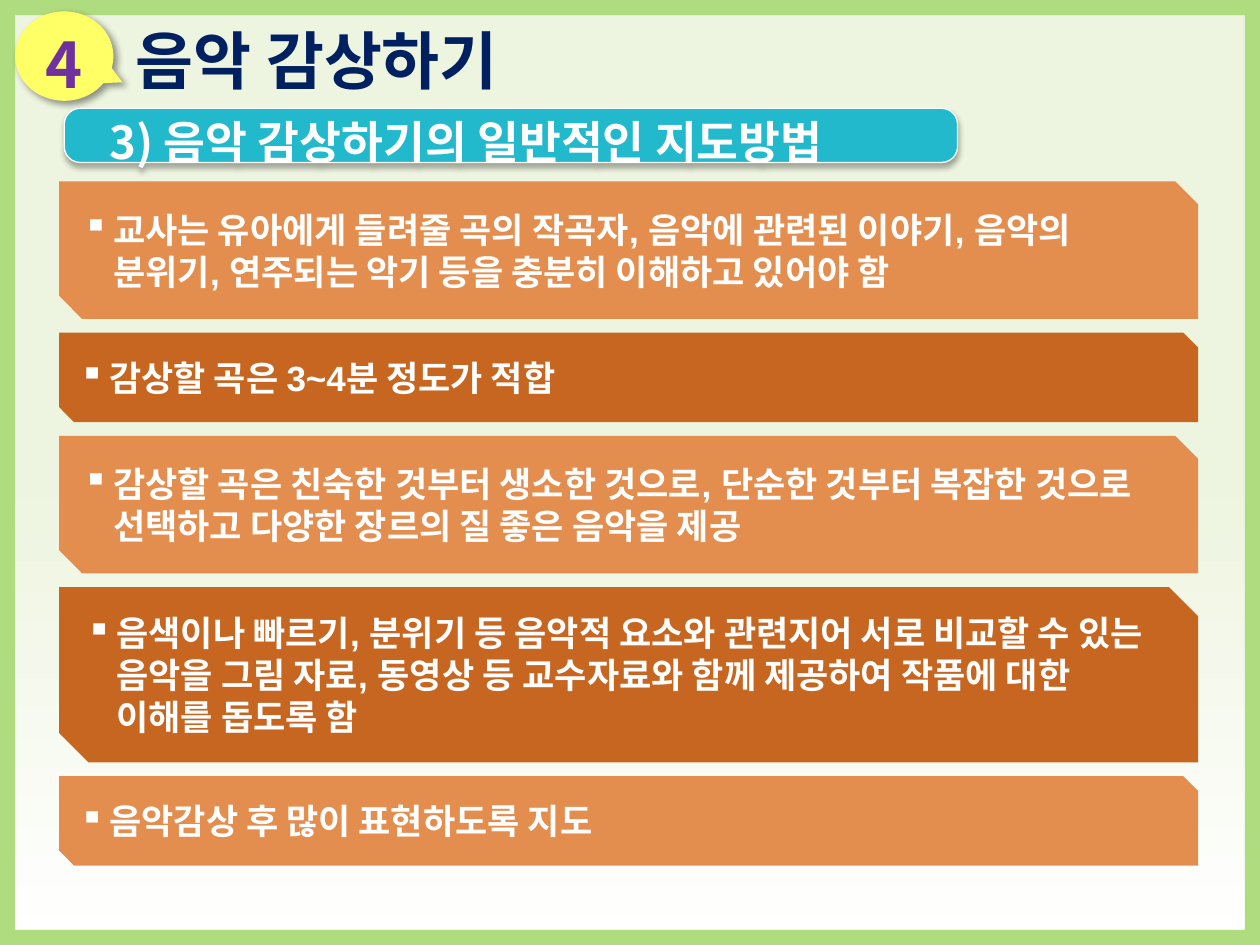
from lxml import etree
from pptx import Presentation
from pptx.dml.color import RGBColor
from pptx.enum.shapes import MSO_SHAPE
from pptx.enum.text import MSO_ANCHOR, PP_ALIGN
from pptx.oxml.ns import qn
from pptx.util import Emu, Inches, Pt

RECT, FRAME = MSO_SHAPE.RECTANGLE, MSO_SHAPE.FRAME
CALLOUT, ROUNDED = MSO_SHAPE.OVAL_CALLOUT, MSO_SHAPE.ROUNDED_RECTANGLE
SNIPPED = MSO_SHAPE.SNIP_2_DIAG_RECTANGLE
MIDDLE, CENTER, LEFT = MSO_ANCHOR.MIDDLE, PP_ALIGN.CENTER, PP_ALIGN.LEFT

WHITE = RGBColor(0xFF, 0xFF, 0xFF)
PALE_GREEN = RGBColor(0xED, 0xF4, 0xDF)
GREEN = RGBColor(0xAF, 0xDC, 0x7E)
NAVY = RGBColor(0x00, 0x20, 0x60)
YELLOW = RGBColor(0xFF, 0xFF, 0x66)
PURPLE = RGBColor(0x70, 0x30, 0xA0)
TEAL = RGBColor(0x23, 0xB9, 0xCD)
LIGHT_ORANGE = RGBColor(0xE3, 0x8E, 0x4F)
DARK_ORANGE = RGBColor(0xC6, 0x66, 0x20)

KOREAN, LATIN = "Noto Sans CJK KR", "Arial"
COLS, ROWS = 100, 75


class Deck:
    """Holds the style and the current slide; lengths are grid columns and rows."""

    def __init__(self):
        self.prs = Presentation()
        self.prs.slide_width, self.prs.slide_height = Inches(10), Inches(7.5)
        self.s = self.prs.slides.add_slide(self.prs.slide_layouts[6])

    def box(self, x, y, w, h):
        col, row = self.prs.slide_width / COLS, self.prs.slide_height / ROWS
        return [Emu(round(n)) for n in (x * col, y * row, w * col, h * row)]

    def shape(self, kind, box, fill=None, adjust=()):
        sp = self.s.shapes.add_shape(kind, *self.box(*box))
        sp.shadow.inherit = False
        sp.line.fill.background()
        if fill is not None:
            sp.fill.solid()
            sp.fill.fore_color.rgb = fill
        for i, value in enumerate(adjust):
            sp.adjustments[i] = value
        return sp

    def gradient(self, sp, stops, angle):
        sp.fill.gradient()
        sp.fill.gradient_angle = angle
        for stop, (position, color) in zip(sp.fill.gradient_stops, stops):
            stop.position = position
            stop.color.rgb = color

    def shadow(self, sp, blur, distance, angle, opacity):
        effects = sp._element.spPr.find(qn("a:effectLst"))
        outer = etree.SubElement(
            effects, qn("a:outerShdw"), blurRad=str(Pt(blur)), dist=str(Pt(distance)),
            dir=str(angle * 60000), algn="ctr", rotWithShape="0")
        color = etree.SubElement(outer, qn("a:srgbClr"), val="000000")
        etree.SubElement(color, qn("a:alpha"), val=str(opacity * 1000))

    def text(self, sp, text, size, color, font=KOREAN, align=LEFT, wrap=True,
             insets=(0.1, 0.05), indent=None, bullet=None, spacing=None):
        tf = sp.text_frame
        tf.text = text
        tf.word_wrap = wrap
        tf.vertical_anchor = MIDDLE
        tf.margin_left = tf.margin_right = Inches(insets[0])
        tf.margin_top = tf.margin_bottom = Inches(insets[1])
        p = tf.paragraphs[0]
        p.alignment = align
        if spacing:
            p.line_spacing = spacing
        pPr = p._p.get_or_add_pPr()
        if indent:
            pPr.set("marL", str(Inches(indent[0])))
            pPr.set("indent", str(Inches(indent[1])))
        if bullet:
            etree.SubElement(pPr, qn("a:buChar"), char=bullet)
        r = p.runs[0]
        r.font.name, r.font.size, r.font.bold = font, Pt(size), True
        r.font.color.rgb = color
        etree.SubElement(r._r.get_or_add_rPr(), qn("a:ea"), typeface=KOREAN)

    def title(self, box, text):
        sp = self.s.shapes.add_textbox(*self.box(*box))
        self.text(sp, text, 36, NAVY, wrap=False)

    def badge(self, box, text):
        sp = self.shape(CALLOUT, box, YELLOW, (0.592, 0.293))
        self.shadow(sp, 4, 3, 45, 40)
        self.text(sp, text, 36, PURPLE, align=CENTER, insets=(0.04, 0.04), spacing=1.2)

    def heading(self, box, text):
        sp = self.shape(ROUNDED, box, TEAL, (0.294,))
        sp.line.color.rgb, sp.line.width = WHITE, Pt(0.75)
        self.shadow(sp, 3.5, 2.2, 90, 32)
        self.text(sp, text, 26, WHITE, insets=(0.24, 0.05), indent=(0.28, -0.2), spacing=1.2)

    def panel(self, box, text, fill):
        sp = self.shape(SNIPPED, box, fill)
        self.text(sp, text, 20, WHITE, LATIN, indent=(0.24, -0.24), bullet="▪")


# Panel height in rows, and its text
GUIDELINES = [
    (10.9, "교사는 유아에게 들려줄 곡의 작곡자, 음악에 관련된 이야기, 음악의 분위기, "
           "연주되는 악기 등을 충분히 이해하고 있어야 함"),
    (7.1, "감상할 곡은 3~4분 정도가 적합"),
    (10.9, "감상할 곡은 친숙한 것부터 생소한 것으로, 단순한 것부터 복잡한 것으로 "
           "선택하고 다양한 장르의 질 좋은 음악을 제공"),
    (13.9, "음색이나 빠르기, 분위기 등 음악적 요소와 관련지어 서로 비교할 수 있는 음악을 "
           "그림 자료, 동영상 등 교수자료와 함께 제공하여 작품에 대한 이해를 돕도록 함"),
    (7.1, "음악감상 후 많이 표현하도록 지도"),
]
PANEL_GAP = 1.1


def main():
    deck = Deck()

    # Background and border
    page = (0, 0, COLS, ROWS)
    deck.gradient(deck.shape(RECT, page), [(0, WHITE), (0.5, PALE_GREEN)], 90)
    deck.shape(FRAME, page, GREEN, (0.016,))

    # Title, number badge and section heading
    deck.title((9.8, 0.9, 89, 7.6), "음악 감상하기")
    deck.badge((1.2, 0.9, 7.8, 7.1), "4")
    deck.heading((5.1, 8.6, 70.9, 4.3), "3) 음악 감상하기의 일반적인 지도방법")

    # Stacked guideline panels in alternating colours
    top = 14.4
    for i, (height, text) in enumerate(GUIDELINES):
        fill = DARK_ORANGE if i % 2 else LIGHT_ORANGE
        deck.panel((4.7, top, 90.4, height), text, fill)
        top += height + PANEL_GAP

    deck.prs.save("out.pptx")


if __name__ == "__main__":
    main()
